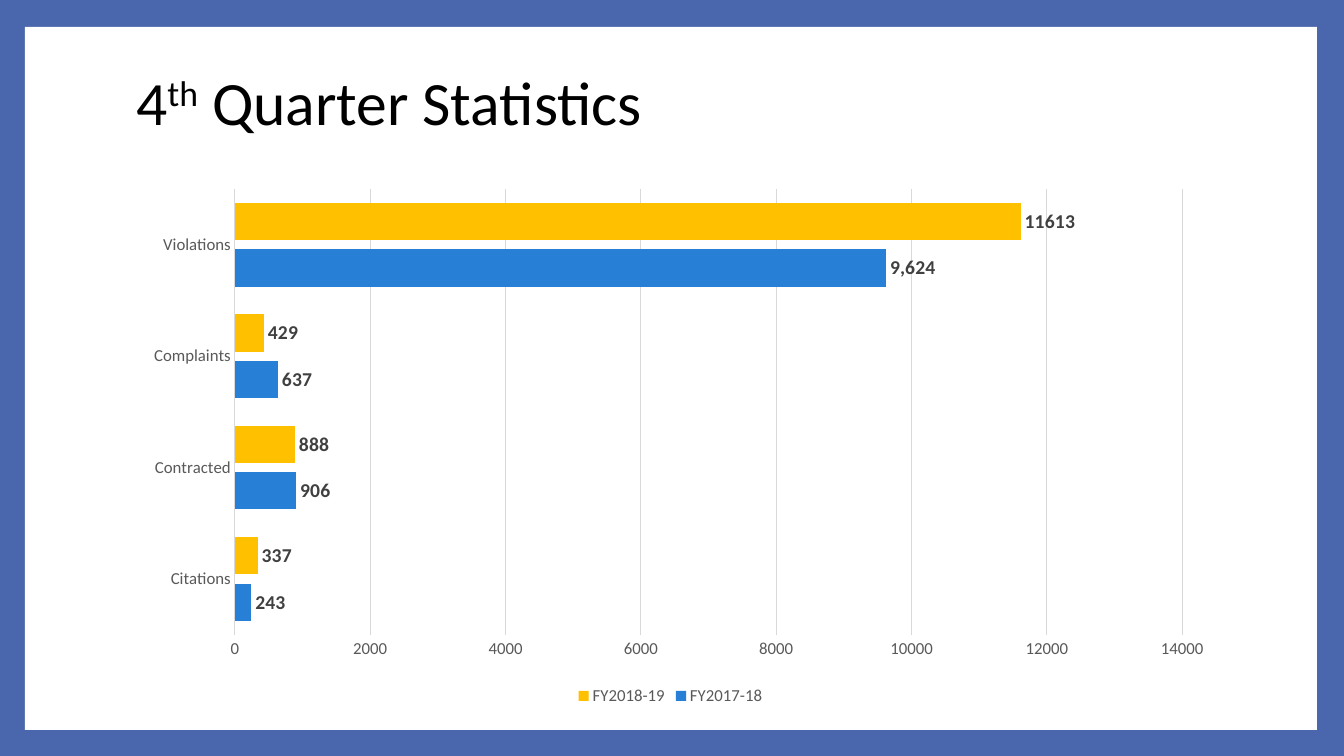
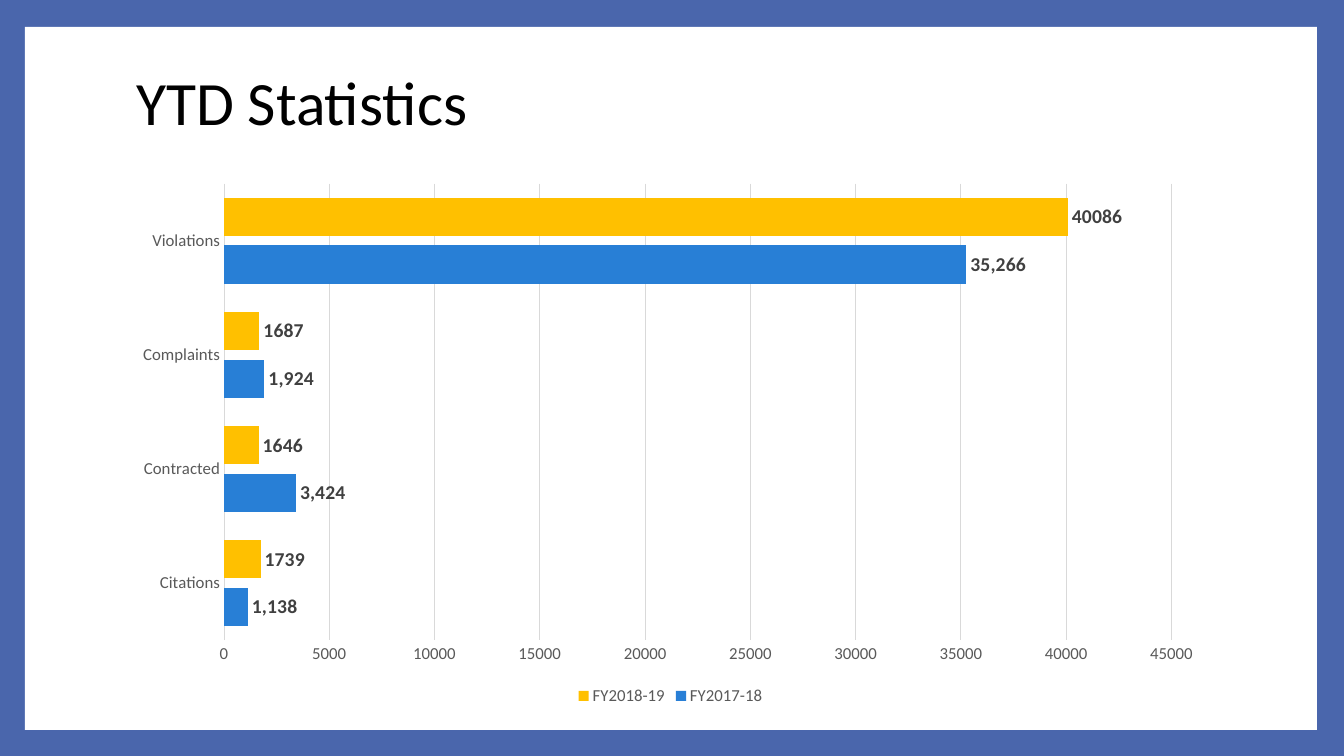
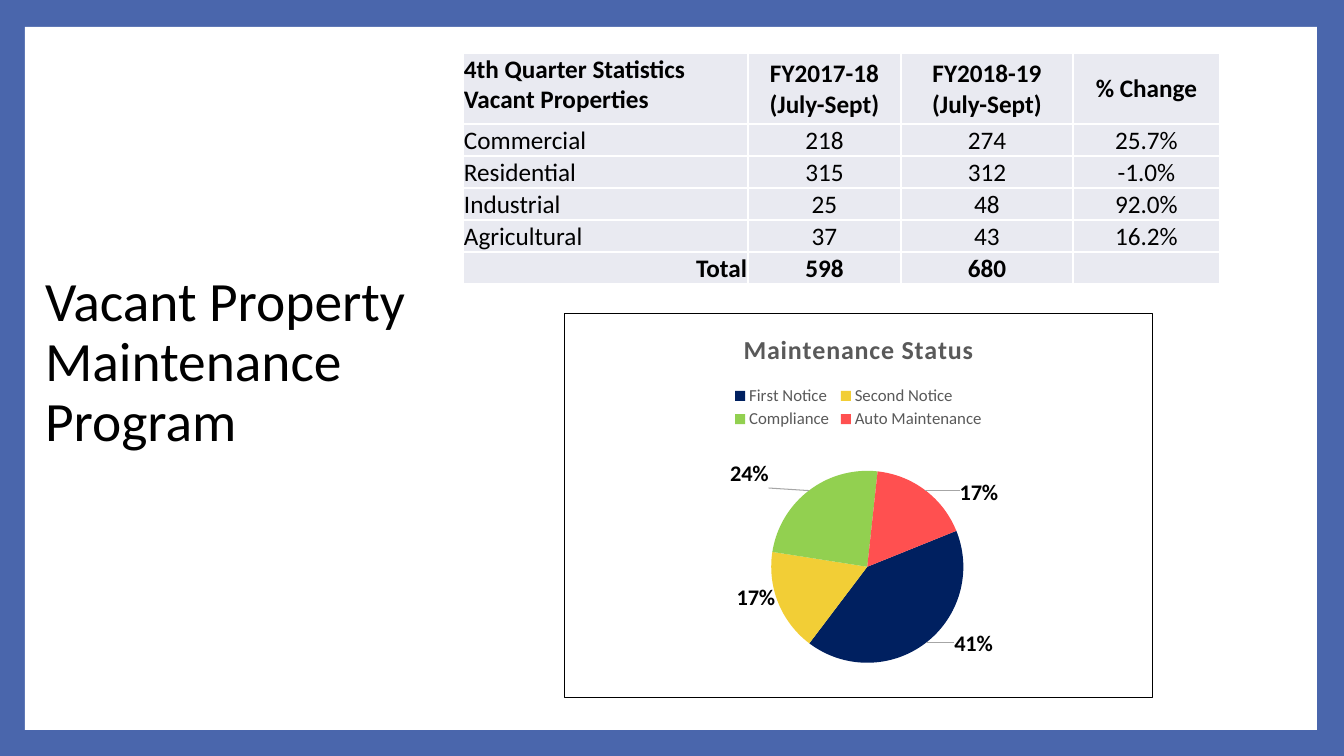
from pptx import Presentation
from pptx.chart.data import CategoryChartData
from pptx.dml.color import RGBColor
from pptx.enum.chart import XL_CHART_TYPE, XL_LABEL_POSITION, XL_LEGEND_POSITION, XL_TICK_MARK
from pptx.enum.shapes import MSO_SHAPE
from pptx.enum.text import MSO_ANCHOR, MSO_AUTO_SIZE, PP_ALIGN
from pptx.oxml import parse_xml
from pptx.oxml.ns import nsdecls, qn
from pptx.util import Pt

EMU_PER_PX = 914400 / 100.8
FONT = "Calibri"
COLORS = {
    "frame": "4A66AC", "panel": "FFFFFF", "text": "000000", "muted": "595959",
    "label": "404040", "grid": "D9D9D9", "leader": "A6A6A6", "cell": "E9EAF1",
    "last_year": "287FD6", "this_year": "FFC000",
    "first": "002060", "second": "F2CE36", "compliance": "92D050", "auto": "FF5050",
}
BAR, PIE = XL_CHART_TYPE.BAR_CLUSTERED, XL_CHART_TYPE.PIE
OUTSIDE, INSIDE = XL_LABEL_POSITION.OUTSIDE_END, XL_LABEL_POSITION.INSIDE_END
TOP_LEGEND, BOTTOM_LEGEND = XL_LEGEND_POSITION.TOP, XL_LEGEND_POSITION.BOTTOM
NO_TICK = XL_TICK_MARK.NONE
LEFT, CENTER, RIGHT = PP_ALIGN.LEFT, PP_ALIGN.CENTER, PP_ALIGN.RIGHT
TOP, MIDDLE, BOTTOM = MSO_ANCHOR.TOP, MSO_ANCHOR.MIDDLE, MSO_ANCHOR.BOTTOM

TITLE_BOX = (126, 31, 1089, 149)
CHART_BOX = (126, 173, 1089, 537)
BAR_CATEGORIES = ("Citations", "Contracted", "Complaints", "Violations")
STATISTICS = [
    {"title": ("4", "th", " Quarter Statistics"), "maximum": 14000, "step": 2000,
     "plot": (0.1, 0.03, 0.87, 0.83),
     "last_year": (243, 906, 637, 9624), "this_year": (337, 888, 429, 11613)},
    {"title": ("YTD Statistics",), "maximum": 45000, "step": 5000,
     "plot": (0.09, 0.02, 0.87, 0.85),
     "last_year": (1138, 3424, 1924, 35266), "this_year": (1739, 1687 - 41, 1687, 40086)},
]
VACANT_ROWS = [
    ("4th Quarter Statistics\vVacant Properties", "FY2017-18\v(July-Sept)",
     "FY2018-19\v(July-Sept)", "% Change"),
    ("Commercial", "218", "274", "25.7%"),
    ("Residential", "315", "312", "-1.0%"),
    ("Industrial", "25", "48", "92.0%"),
    ("Agricultural", "37", "43", "16.2%"),
    ("Total", "598", "680", ""),
]
# name, value, colour, label offset as a share of the chart
MAINTENANCE = [
    ("First Notice", 41, "first", (0.12, 0.05)),
    ("Second Notice", 17, "second", (-0.08, 0.03)),
    ("Compliance", 24, "compliance", (-0.14, -0.09)),
    ("Auto Maintenance", 17, "auto", (0.13, -0.04)),
]


def px(length):
    return round(length * EMU_PER_PX)


def rgb(name):
    return RGBColor.from_string(COLORS[name])


def style_font(font, size, color="text", bold=False):
    font.name, font.size, font.bold = FONT, Pt(size), bold
    font.color.rgb = rgb(color)


def paint(fill, color):
    fill.solid()
    fill.fore_color.rgb = rgb(color)


def line_xml(tag, color, width):
    return (f'<a:{tag} {nsdecls("a")} w="{Pt(width)}"><a:solidFill>'
            f'<a:srgbClr val="{COLORS[color]}"/></a:solidFill></a:{tag}>')


def set_layout(parent, index, values, inner=False):
    """Give a chart part a manual layout of x, y and, when listed, w, h."""
    for old in parent.findall(qn("c:layout")):
        parent.remove(old)
    target = '<c:layoutTarget val="inner"/>' if inner else ""
    modes = '<c:xMode val="edge"/><c:yMode val="edge"/>' if len(values) == 4 else ""
    sizes = "".join(f'<c:{key} val="{value}"/>' for key, value in zip("xywh", values))
    parent.insert(index, parse_xml(
        f'<c:layout {nsdecls("c")}><c:manualLayout>{target}{modes}{sizes}'
        "</c:manualLayout></c:layout>"))


def set_up_master(deck):
    """Frame colour and white panel behind every slide."""
    master = deck.slide_master
    paint(master.background.fill, "frame")
    draft = deck.slides.add_slide(deck.slide_layouts[5])
    panel = draft.shapes.add_shape(MSO_SHAPE.RECTANGLE, *map(px, (25, 27, 1292, 703)))
    panel.shadow.inherit = False
    paint(panel.fill, "panel")
    panel.line.fill.background()
    master.shapes.element.insert(2, panel.element)
    return draft


def add_title(page, box, parts, size=44):
    """Write the title; every second part is superscript."""
    title = page.shapes.title
    title.left, title.top, title.width, title.height = map(px, box)
    frame = title.text_frame
    frame.word_wrap, frame.auto_size = True, MSO_AUTO_SIZE.NONE
    frame.vertical_anchor = MIDDLE
    para = frame.paragraphs[0]
    para.text = parts[0]
    for part in parts[1:]:
        para.add_run().text = part
    para.alignment, para.line_spacing = LEFT, 0.9
    for span in para.runs:
        style_font(span.font, size)
    for properties in title.element.xpath(".//a:r/a:rPr")[1::2] if len(parts) > 1 else []:
        properties.set("baseline", "30000")
    for line_break in title.element.xpath(".//a:br"):
        line_break.append(parse_xml(f'<a:rPr {nsdecls("a")} sz="{round(size * 100)}"/>'))


def add_chart(page, kind, box, data, legend_position, plot_layout):
    chart = page.shapes.add_chart(kind, *map(px, box), data).chart
    style_font(chart.font, 10)
    chart.has_legend = True
    chart.legend.position = legend_position
    chart.legend.include_in_layout = False
    style_font(chart.legend.font, 12, "muted")
    set_layout(chart.element.xpath("c:chart/c:plotArea")[0], 0, plot_layout, inner=True)
    return chart


def add_bar_chart(page, box, stats):
    data = CategoryChartData()
    data.categories = BAR_CATEGORIES
    data.add_series("FY2017-18", stats["last_year"], "#,##0")
    data.add_series("FY2018-19", stats["this_year"], "General")
    chart = add_chart(page, BAR, box, data, BOTTOM_LEGEND, stats["plot"])
    chart.has_title = False
    plot = chart.plots[0]
    plot.gap_width, plot.overlap, plot.vary_by_categories = 75, -25, False
    for series, color, number_format in zip(
            plot.series, ("last_year", "this_year"), ("#,##0", "General")):
        paint(series.format.fill, color)
        labels = series.data_labels
        labels.show_value, labels.position = True, OUTSIDE
        labels.number_format, labels.number_format_is_linked = number_format, False
        style_font(labels.font, 14, "label", True)
    for axis in (chart.category_axis, chart.value_axis):
        axis.major_tick_mark = axis.minor_tick_mark = NO_TICK
        style_font(axis.tick_labels.font, 12, "muted")
    scale = chart.value_axis
    scale.minimum_scale, scale.maximum_scale = 0, stats["maximum"]
    scale.major_unit = stats["step"]
    scale.tick_labels.number_format = "General"
    scale.tick_labels.number_format_is_linked = False
    scale.format.line.fill.background()
    scale.has_major_gridlines = True
    for line in (scale.major_gridlines.format.line, chart.category_axis.format.line):
        line.width = Pt(0.75)
        line.color.rgb = rgb("grid")


def add_pie_chart(page, box):
    names, values, colors, offsets = zip(*MAINTENANCE)
    data = CategoryChartData()
    data.categories = names
    data.add_series("Maintenance Status", values)
    chart = add_chart(page, PIE, box, data, TOP_LEGEND, (0.35, 0.41, 0.33, 0.5))
    root = chart.element
    set_layout(root.xpath("c:chart/c:legend")[0], 1, (0.28, 0.18, 0.44, 0.13))

    chart.has_title = True
    title_para = chart.chart_title.text_frame.paragraphs[0]
    title_para.text = "Maintenance Status"
    style_font(title_para.runs[0].font, 18.6, "muted", True)
    root.xpath("c:chart/c:title//a:r/a:rPr")[0].set("spc", "50")

    plot = chart.plots[0]
    plot.vary_by_categories = True
    root.xpath(".//c:pieChart")[0].append(
        parse_xml(f'<c:firstSliceAng {nsdecls("c")} val="68"/>'))
    series = plot.series[0]
    labels = series.data_labels
    labels.show_value, labels.show_percentage = False, True
    labels.position = INSIDE
    style_font(labels.font, 16, bold=True)
    for index, color in enumerate(colors):
        point = series.points[index]
        paint(point.format.fill, color)
        style_font(point.data_label.font, 16, bold=True)
        point.data_label.position = INSIDE
    for label, offset in zip(root.xpath(".//c:dLbl"), offsets):
        set_layout(label, 1, offset)
        label.find(qn("c:showVal")).set("val", "0")
        label.find(qn("c:showPercent")).set("val", "1")

    group = root.xpath(".//c:ser/c:dLbls")[0]
    for old in group.findall(qn("c:showLeaderLines")):
        group.remove(old)
    group.append(parse_xml(f'<c:showLeaderLines {nsdecls("c")} val="1"/>'))
    group.append(parse_xml(f'<c:leaderLines {nsdecls("c")}><c:spPr>'
                           f'{line_xml("ln", "leader", 0.75)}</c:spPr></c:leaderLines>'))
    root.find(qn("c:chart")).addnext(parse_xml(
        f'<c:spPr {nsdecls("c")}>{line_xml("ln", "text", 0.75)}</c:spPr>'))


def style_cell(cell, text, alignment, anchor, bold):
    cell.margin_left = cell.margin_right = cell.margin_top = px(1)
    cell.margin_bottom = 0
    cell.vertical_anchor = anchor
    properties = cell._tc.get_or_add_tcPr()
    for side in "LRTB":
        properties.append(parse_xml(line_xml(f"ln{side}", "panel", 1)))
    paint(cell.fill, "cell")
    para = cell.text_frame.paragraphs[0]
    para.text = text
    para.alignment = alignment
    for span in para.runs:
        style_font(span.font, 18, bold=bold)


def add_vacant_table(page, left, top):
    widths, heights = (285, 153, 172, 147), (71,) + (32,) * 5
    table = page.shapes.add_table(
        len(heights), len(widths),
        *map(px, (left, top, sum(widths), sum(heights)))).table
    table.first_row = table.horz_banding = False
    for column, width in zip(table.columns, widths):
        column.width = px(width)
    last = len(heights) - 1
    for i, (texts, height) in enumerate(zip(VACANT_ROWS, heights)):
        table.rows[i].height = px(height)
        for j, text in enumerate(texts):
            first_alignment = RIGHT if i == last else LEFT
            header_anchor = MIDDLE if j else TOP
            style_cell(table.cell(i, j), text, CENTER if j else first_alignment,
                       BOTTOM if i else header_anchor, i in (0, last))


def build_statistics(page, stats):
    add_title(page, TITLE_BOX, stats["title"])
    add_bar_chart(page, CHART_BOX, stats)


def build_vacant(page):
    add_title(page, (35, 289, 1089, 149), ("Vacant Property\vMaintenance\vProgram",), 39.6)
    add_vacant_table(page, 463, 53)
    add_pie_chart(page, (564, 313, 589, 385))


def main():
    deck = Presentation()
    deck.slide_width, deck.slide_height = px(1344), px(756)
    first_page = set_up_master(deck)
    layout = first_page.slide_layout
    build_statistics(first_page, STATISTICS[0])
    build_statistics(deck.slides.add_slide(layout), STATISTICS[1])
    build_vacant(deck.slides.add_slide(layout))
    deck.save("out.pptx")


if __name__ == "__main__":
    main()
